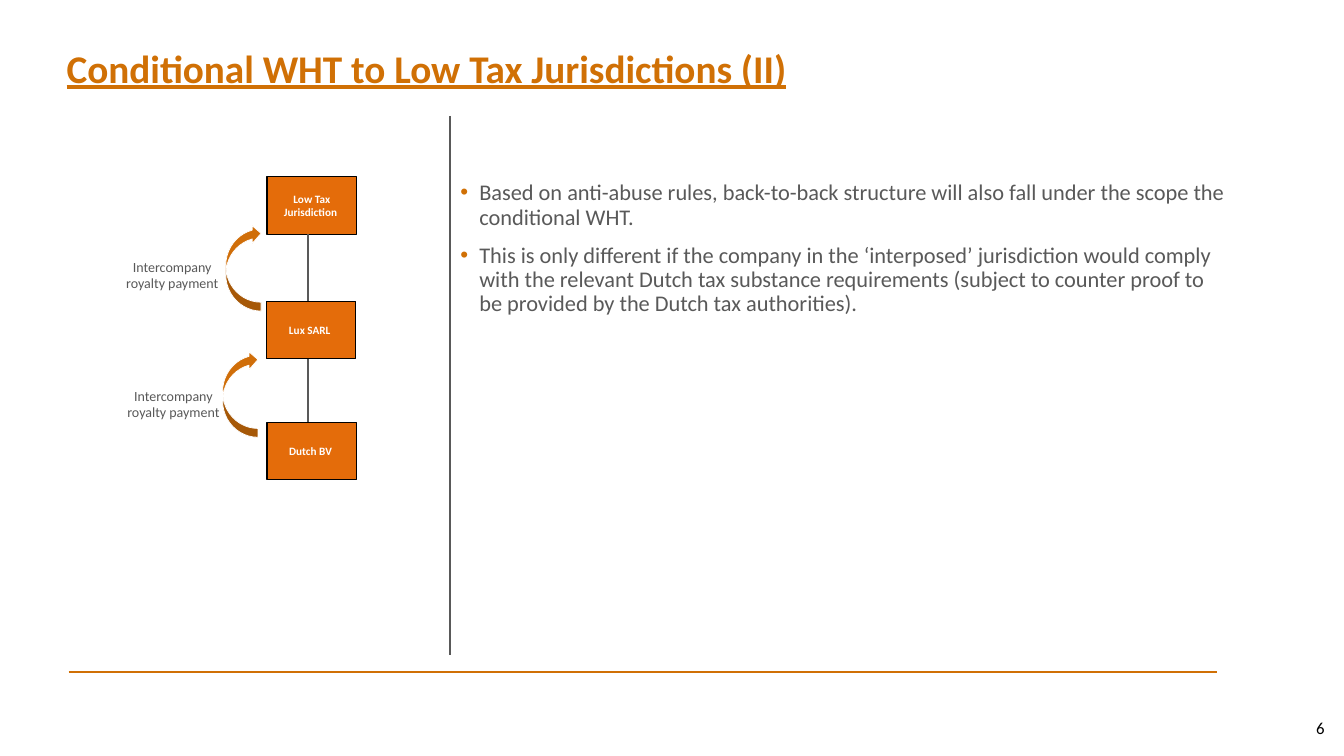
from lxml import etree
from pptx import Presentation
from pptx.dml.color import RGBColor
from pptx.enum import shapes, text
from pptx.oxml.ns import qn
from pptx.util import Cm, Pt

TITLE = "Conditional WHT to Low Tax Jurisdictions (II)"
BULLETS = [
    "Based on anti-abuse rules, back-to-back structure will also fall under the scope the conditional WHT.",
    "This is only different if the company in the ‘interposed’ jurisdiction would comply with the relevant "
    "Dutch tax substance requirements (subject to counter proof to be provided by the Dutch tax authorities).",
]
PAGE_NUMBER = "6"
# Name, left, top of each company, from parent down
COMPANIES = [
    ("Low Tax Jurisdiction ", 6.73, 4.45),
    ("Lux SARL ", 6.71, 7.59),
    ("Dutch BV ", 6.73, 10.64),
]
COMPANY_SIZE = (2.26, 1.45)
OWNERSHIP_X = 7.77
PAYMENT_LINES = ["Intercompany", "royalty payment"]
# Position of the label, position of the arrow
PAYMENTS = [((2.36, 6.38), (5.69, 5.66)), ((2.39, 9.63), (5.61, 8.84))]
LABEL_SIZE = (3.96, 1.12)
ARROW_SIZE = (0.89, 2.18)

ACCENT, GREY, WHITE, BLACK = "D07005", "595959", "FFFFFF", "000000"
BOX_FILL, ARROW_FILL = "E46C0A", "D06E09"
FONT = "Calibri"


def rgb(value):
    return RGBColor.from_string(value)


def set_all(target, values):
    for name, value in values.items():
        setattr(target, name, value)


def write(shape, lines, font, paragraph_format=None, frame_format=None):
    """Fill a shape with one paragraph per line, all in the same format."""
    frame = shape.text_frame
    set_all(frame, {"word_wrap": True, **(frame_format or {})})
    font = {"name": FONT, **font}
    color = font.pop("color")
    for index, line in enumerate(lines):
        paragraph = frame.add_paragraph() if index else frame.paragraphs[0]
        set_all(paragraph, paragraph_format or {})
        run = paragraph.add_run()
        run.text = line
        set_all(run.font, font)
        run.font.color.rgb = rgb(color)


def add_text(slide, left, top, width, height, *content):
    box = slide.shapes.add_textbox(Cm(left), Cm(top), Cm(width), Cm(height))
    write(box, *content)
    return box


def add_line(slide, start, end, color, width):
    line = slide.shapes.add_connector(
        shapes.MSO_CONNECTOR.STRAIGHT, *(Cm(value) for value in start + end))
    line.line.color.rgb = rgb(color)
    line.line.width = Pt(width)
    etree.SubElement(line._element.spPr, qn("a:effectLst"))


def add_shape(slide, kind, position, size, fill, outline, width):
    shape = slide.shapes.add_shape(kind, *(Cm(value) for value in position + size))
    shape.shadow.inherit = False
    shape.fill.solid()
    shape.fill.fore_color.rgb = rgb(fill)
    shape.line.color.rgb = rgb(outline)
    shape.line.width = Pt(width)
    return shape


def add_bullet(paragraph, color):
    properties = paragraph._p.get_or_add_pPr()
    set_indent = {"marL": Cm(0.48), "indent": -Cm(0.48)}
    for name, value in set_indent.items():
        properties.set(name, str(value))
    bullet_color = etree.SubElement(properties, qn("a:buClr"))
    etree.SubElement(bullet_color, qn("a:srgbClr"), val=color)
    etree.SubElement(properties, qn("a:buFont"), typeface="Arial")
    etree.SubElement(properties, qn("a:buChar"), char="•")


def add_structure(slide):
    width, height = COMPANY_SIZE
    for name, left, top in COMPANIES:
        box = add_shape(slide, shapes.MSO_SHAPE.RECTANGLE, (left, top), COMPANY_SIZE,
                        BOX_FILL, BLACK, 0.75)
        write(box, [name], {"size": Pt(8), "bold": True, "color": WHITE},
              {"alignment": text.PP_ALIGN.CENTER},
              {"vertical_anchor": text.MSO_ANCHOR.MIDDLE})
    for (_, _, upper), (_, _, lower) in zip(COMPANIES, COMPANIES[1:]):
        add_line(slide, (OWNERSHIP_X, upper + height), (OWNERSHIP_X, lower), GREY, 1.5)
    for label, arrow_position in PAYMENTS:
        add_text(slide, *label, *LABEL_SIZE, PAYMENT_LINES,
                 {"size": Pt(10), "color": GREY}, {"alignment": text.PP_ALIGN.CENTER})
        arrow = add_shape(slide, shapes.MSO_SHAPE.CURVED_RIGHT_ARROW, arrow_position,
                          ARROW_SIZE, ARROW_FILL, WHITE, 0.5)
        arrow._element.spPr.find(qn("a:xfrm")).set("flipV", "1")


def main():
    presentation = Presentation()
    set_all(presentation, {"slide_width": Cm(33.87), "slide_height": Cm(19.05)})
    slide = presentation.slides.add_slide(presentation.slide_layouts[6])

    add_line(slide, (1.73, 16.94), (30.68, 16.94), ACCENT, 1.25)
    margins = dict.fromkeys(
        ("margin_left", "margin_top", "margin_right", "margin_bottom"), 0)
    add_text(slide, 1.68, 0.76, 22.86, 2.01, [TITLE],
             {"size": Pt(28), "bold": True, "underline": True, "color": ACCENT},
             {"line_spacing": Pt(30)},
             {"vertical_anchor": text.MSO_ANCHOR.MIDDLE, **margins})
    body = add_text(slide, 11.35, 4.45, 19.91, 10.92, BULLETS,
                    {"size": Pt(16), "color": GREY},
                    {"line_spacing": 0.9, "space_before": Pt(10)})
    for paragraph in body.text_frame.paragraphs:
        add_bullet(paragraph, ACCENT)
    add_structure(slide)
    add_text(slide, 26.01, 17.83, 7.62, 1.02, [PAGE_NUMBER],
             {"size": Pt(12), "color": BLACK}, {"alignment": text.PP_ALIGN.RIGHT},
             {"vertical_anchor": text.MSO_ANCHOR.MIDDLE})
    add_line(slide, (11.35, 2.92), (11.35, 16.51), GREY, 1.5)
    presentation.save("out.pptx")


if __name__ == "__main__":
    main()
